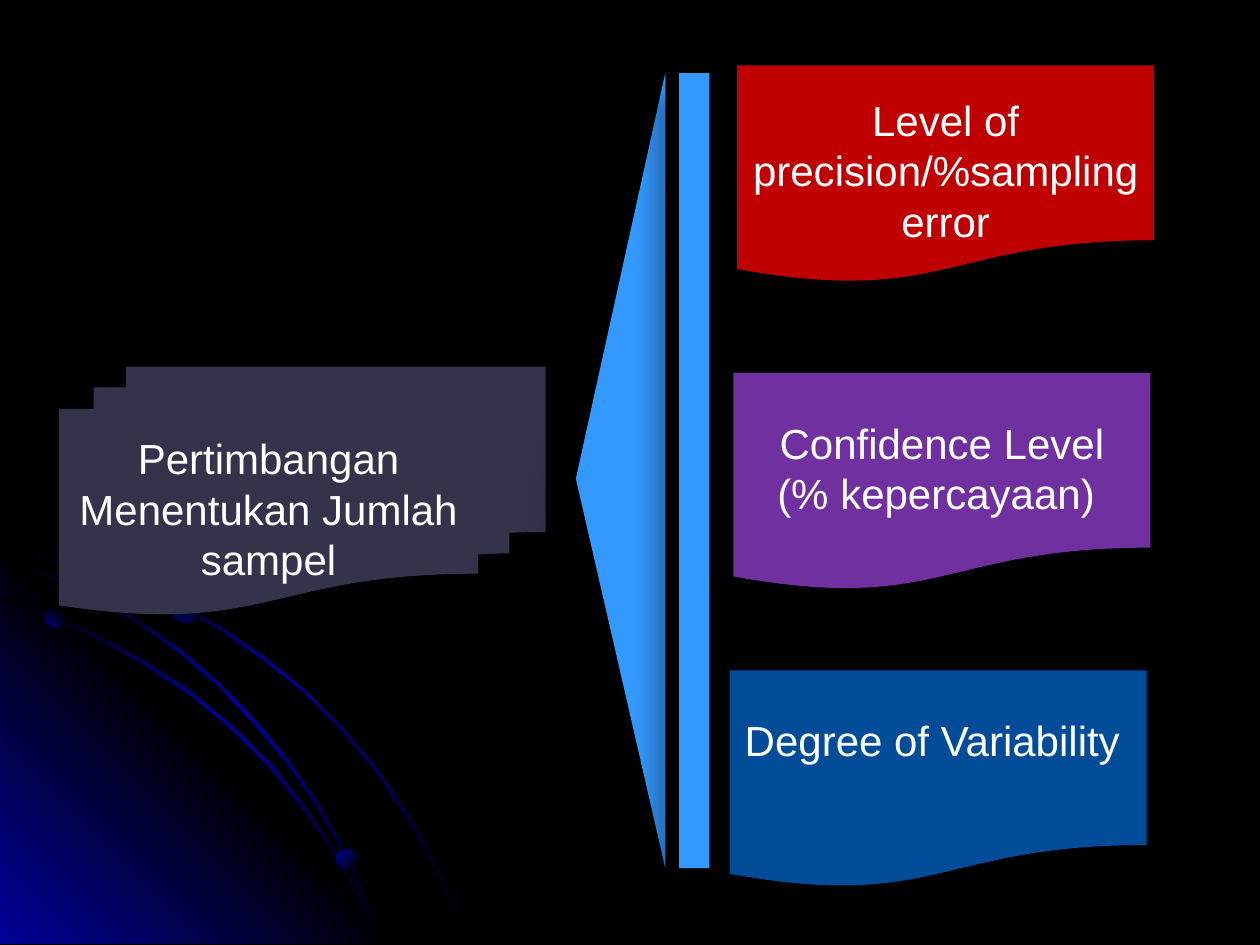
from lxml.etree import SubElement
from pptx import Presentation
from pptx.dml.color import RGBColor
from pptx.enum.shapes import MSO_SHAPE as Preset
from pptx.enum.text import MSO_ANCHOR as Anchor, PP_ALIGN as Align
from pptx.oxml.ns import qn
from pptx.util import Inches, Pt

BLACK, NAVY, SKY = "000000", "010199", "3399FF"
GLOW = [(0, BLACK), (50, NAVY), (100, BLACK)]
CORNER = [(0, NAVY), (50, BLACK), (100, NAVY)]
FADE = [(0, NAVY), (100, BLACK)]

LOWER_ARC = [
    (0.57, 4.47), (0.28, 4.41), (0, 4.35), (0, 4.38), (0.28, 4.43), (0.56, 4.49),
    (0.97, 4.61), (1.35, 4.78), (1.73, 4.99), (2.08, 5.23), (2.41, 5.49),
    (2.71, 5.79), (2.98, 6.12), (3.23, 6.49), (3.37, 6.73), (3.5, 6.98),
    (3.6, 7.23), (3.7, 7.49), (3.72, 7.49), (3.62, 7.23), (3.52, 6.98),
    (3.39, 6.73), (3.25, 6.48), (3, 6.11), (2.72, 5.78), (2.42, 5.48),
    (2.09, 5.21), (1.74, 4.97), (1.36, 4.77), (0.98, 4.59)]
CORNER_WEDGE = [(3.22, 7.49), (0, 7.49), (0, 4.27)]
INNER_ARC = [
    (2.85, 7.14), (2.94, 7.32), (3.01, 7.49), (3.03, 7.49), (2.96, 7.3),
    (2.86, 7.12), (2.66, 6.76), (2.42, 6.4), (2.15, 6.06), (1.84, 5.76),
    (1.52, 5.49), (1.17, 5.26), (0.79, 5.05), (0.41, 4.88), (0, 4.75),
    (0, 4.77), (0.39, 4.9), (0.77, 5.07), (1.15, 5.28), (1.5, 5.51),
    (1.83, 5.78), (2.13, 6.08), (2.4, 6.41), (2.65, 6.77)]
MIDDLE_ARC = [
    (0, 4.42), (0, 4.44), (0.36, 4.57), (0.74, 4.75), (1.09, 4.94),
    (1.42, 5.18), (1.73, 5.44), (2.02, 5.75), (2.27, 6.05), (2.52, 6.41),
    (2.67, 6.67), (2.8, 6.94), (2.92, 7.22), (3.01, 7.49), (3.03, 7.49),
    (2.94, 7.2), (2.82, 6.93), (2.69, 6.65), (2.54, 6.39), (2.29, 6.03),
    (2.04, 5.73), (1.75, 5.43), (1.44, 5.16), (1.11, 4.93), (0.76, 4.73),
    (0.39, 4.55)]


def paint(fill, color):
    fill.solid()
    fill.fore_color.rgb = RGBColor.from_string(color)


def paint_gradient(shape, stops, angle):
    shape.shadow.inherit = False
    shape.line.fill.background()
    shape.fill.gradient()
    shape.fill.gradient_angle = 360 - angle
    stop_list = shape._element.spPr.find(qn("a:gradFill")).find(qn("a:gsLst"))
    for stop in list(stop_list):
        stop_list.remove(stop)
    for position, color in stops:
        stop = SubElement(stop_list, qn("a:gs"), pos=str(position * 1000))
        SubElement(stop, qn("a:srgbClr"), val=color)


def cast_shadow(shape):
    shape.shadow.inherit = False
    effects = shape._element.spPr.find(qn("a:effectLst"))
    shadow = SubElement(effects, qn("a:outerShdw"), blurRad=str(Pt(11.8)),
                        dist=str(Pt(19.7)), dir=str(141 * 60000),
                        algn="ctr", rotWithShape="0")
    color = SubElement(shadow, qn("a:srgbClr"), val=BLACK)
    SubElement(color, qn("a:alpha"), val="28000")


def add_block(slide, preset, box, color):
    block = slide.shapes.add_shape(preset, *map(Inches, box))
    paint(block.fill, color)
    block.line.fill.background()
    cast_shadow(block)
    return block


def add_document(slide, preset, box, color, lines, top_margin):
    document = add_block(slide, preset, box, color)
    frame = document.text_frame
    frame.word_wrap = True
    frame.vertical_anchor = Anchor.TOP
    frame.margin_top = Inches(top_margin)
    frame.margin_bottom = 0
    frame.text = "\n".join(lines)
    for paragraph in frame.paragraphs:
        paragraph.alignment = Align.CENTER
        paragraph.line_spacing = Pt(28.8)
        paragraph.font.name = "Arial"
        paragraph.font.size = Pt(24)
        paragraph.font.color.rgb = RGBColor.from_string("FFFFFF")


def add_backdrop(slide):
    paint(slide.background.fill, BLACK)
    for outline, stops, angle in [(LOWER_ARC, GLOW, 45), (CORNER_WEDGE, CORNER, 315),
                                  (INNER_ARC, GLOW, 45), (MIDDLE_ARC, GLOW, 45)]:
        points = [(Inches(x), Inches(y)) for x, y in outline]
        builder = slide.shapes.build_freeform(*points[0])
        builder.add_line_segments(points[1:], close=True)
        paint_gradient(builder.convert_to_shape(), stops, angle)
    for left, top, size, angle in [(0.36, 4.83, 0.15, 315), (2.67, 6.74, 0.16, 45),
                                   (1.37, 4.73, 0.21, 315)]:
        bead = slide.shapes.add_shape(Preset.OVAL, Inches(left), Inches(top),
                                      Inches(size), Inches(size))
        paint_gradient(bead, FADE, angle)


def add_factors(slide, left, top):
    factors = [
        (0.06, 0, "C00000", ["Level of precision/%sampling error"], 0.23),
        (0.03, 2.44, "7030A0", ["Confidence Level", "(% kepercayaan) "], 0.35),
        (0, 4.8, "004C99", ["Degree of Variability "], 0.35)]
    for dx, dy, color, lines, top_margin in factors:
        add_document(slide, Preset.FLOWCHART_DOCUMENT,
                     (left + dx, top + dy, 3.31, 1.73), color, lines, top_margin)


def add_pointer(slide, left, top, height):
    head_width, gap, bar_width = 0.71, 0.11, 0.24
    head = add_block(slide, Preset.ISOSCELES_TRIANGLE,
                     (left + (head_width - height) / 2, top + (height - head_width) / 2,
                      height, head_width), SKY)
    head.rotation = 270
    head.adjustments[0] = 0.49
    add_block(slide, Preset.RECTANGLE,
              (left + head_width + gap, top, bar_width, height), SKY)


def main():
    deck = Presentation()
    deck.slide_width, deck.slide_height = Inches(10), Inches(7.5)
    slide = deck.slides.add_slide(deck.slide_layouts[6])
    add_backdrop(slide)
    add_document(slide, Preset.FLOWCHART_MULTIDOCUMENT, (0.47, 2.91, 3.86, 1.97),
                 "33334C", ["Pertimbangan Menentukan Jumlah sampel"], 0.19)
    add_factors(slide, 5.79, 0.52)
    add_pointer(slide, 4.57, 0.58, 6.31)
    deck.save("out.pptx")


if __name__ == "__main__":
    main()
